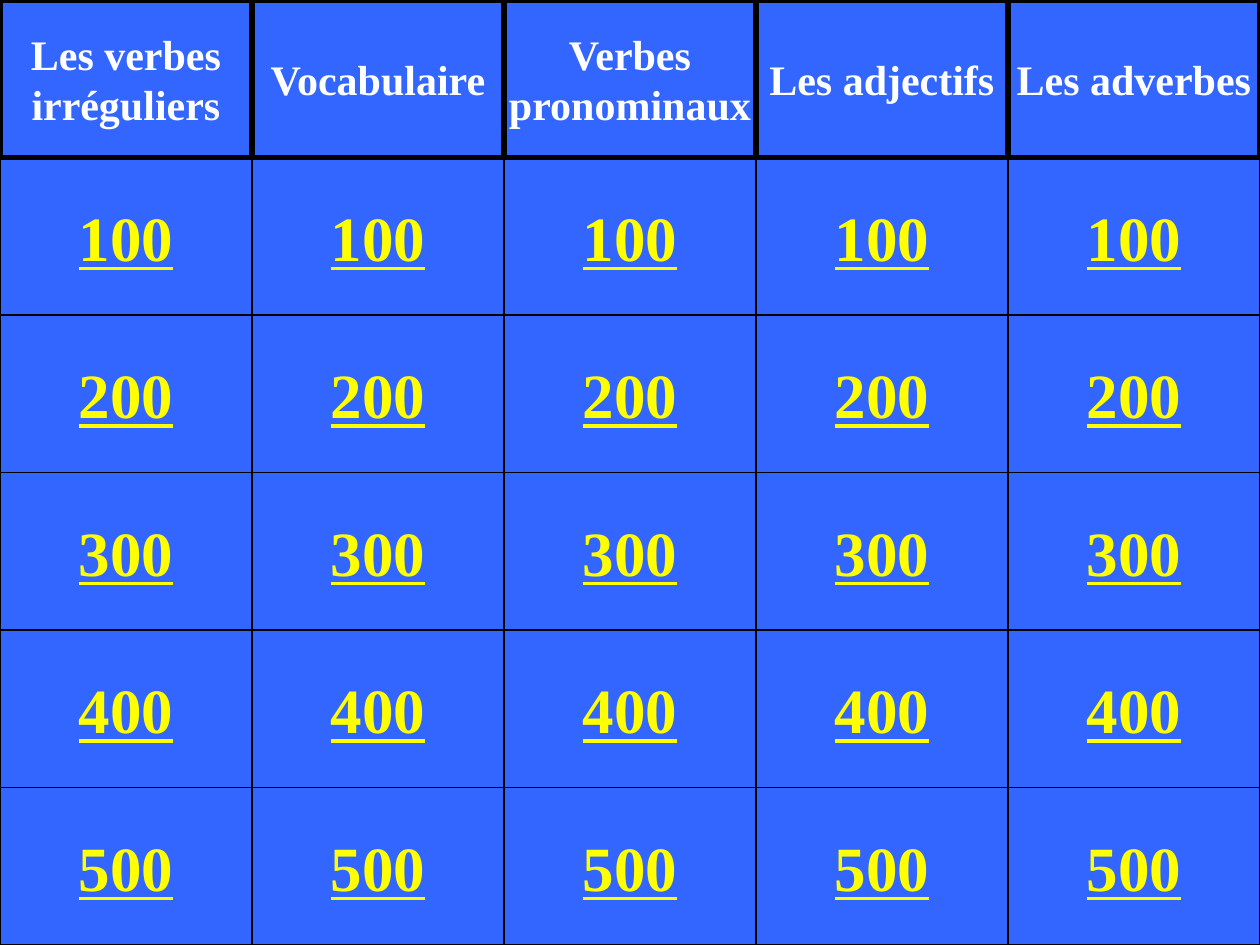
"""Build a quiz board with five categories and five point values each."""
from dataclasses import dataclass

from pptx import Presentation
from pptx.dml.color import RGBColor
from pptx.enum.shapes import MSO_SHAPE
from pptx.enum.text import MSO_ANCHOR, PP_ALIGN
from pptx.util import Inches, Pt

RECT, BUTTON = MSO_SHAPE.RECTANGLE, MSO_SHAPE.ACTION_BUTTON_CUSTOM
MIDDLE, CENTER = MSO_ANCHOR.MIDDLE, PP_ALIGN.CENTER

CATEGORIES = [
    "Les verbes\nirréguliers",
    "Vocabulaire",
    "Verbes\npronominaux",
    "Les adjectifs",
    "Les adverbes",
]
POINTS = [100, 200, 300, 400, 500]
SLIDE_W, SLIDE_H = 10, 7.5
CELL_W = SLIDE_W / len(CATEGORIES)
CELL_H = SLIDE_H / (len(POINTS) + 1)


@dataclass(frozen=True)
class CellStyle:
    shape: MSO_SHAPE
    color: RGBColor
    size: int
    border: float
    underline: bool


@dataclass(frozen=True)
class Theme:
    font: str = "Times New Roman"
    board: RGBColor = RGBColor(0x33, 0x66, 0xFF)
    line: RGBColor = RGBColor(0, 0, 0)
    header: CellStyle = CellStyle(RECT, RGBColor(0xFF, 0xFF, 0xFF), 24, 3, False)
    points: CellStyle = CellStyle(BUTTON, RGBColor(0xFF, 0xFF, 0), 36, 0.75, True)


THEME = Theme()


def add_cell(slide, col, row, text, style):
    sp = slide.shapes.add_shape(
        style.shape, Inches(col * CELL_W), Inches(row * CELL_H),
        Inches(CELL_W), Inches(CELL_H))
    sp.shadow.inherit = False
    sp.fill.solid()
    sp.fill.fore_color.rgb = THEME.board
    sp.line.color.rgb = THEME.line
    sp.line.width = Pt(style.border)
    tf = sp.text_frame
    tf.word_wrap = False
    tf.vertical_anchor = MIDDLE
    tf.text = text
    for p in tf.paragraphs:
        p.alignment = CENTER
        for r in p.runs:
            r.font.name = THEME.font
            r.font.size = Pt(style.size)
            r.font.bold = True
            r.font.underline = style.underline
            r.font.color.rgb = style.color


def main():
    prs = Presentation()
    prs.slide_width, prs.slide_height = Inches(SLIDE_W), Inches(SLIDE_H)
    s = prs.slides.add_slide(prs.slide_layouts[6])
    s.background.fill.solid()
    s.background.fill.fore_color.rgb = THEME.board
    for col in range(len(CATEGORIES)):
        for row, value in enumerate(POINTS, start=1):
            add_cell(s, col, row, str(value), THEME.points)
    for col, category in enumerate(CATEGORIES):
        add_cell(s, col, 0, category, THEME.header)
    prs.save("out.pptx")


if __name__ == "__main__":
    main()
